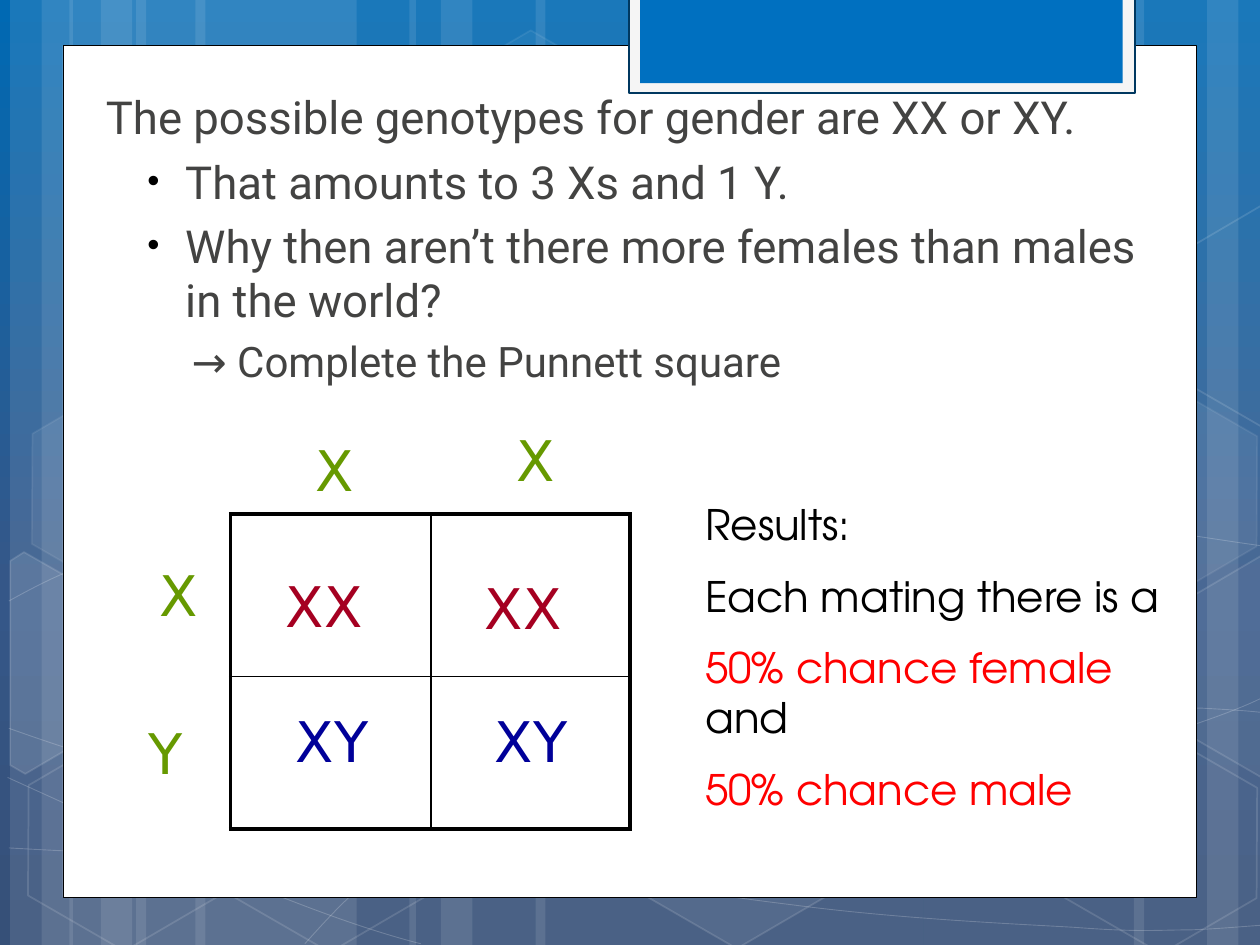
import math
from copy import deepcopy
from dataclasses import dataclass
from typing import NamedTuple, Optional

from pptx import Presentation
from pptx import util as u
from pptx.dml.color import RGBColor
from pptx.enum import shapes, text
from pptx.oxml import ns, xmlchemy

PX = 9144
TILT = 30


@dataclass(frozen=True)
class Theme:
    white: str = "FFFFFF"
    black: str = "000000"
    body: str = "434342"
    parent: str = "669900"
    female: str = "A50021"
    male: str = "000099"
    result: str = "FF0000"
    tab: str = "0070C0"
    tab_frame: str = "F5F5F5"
    tab_line: str = "003860"
    sky: tuple = ((0, "0069B3"), (0.62, "355788"), (1, "365078"))
    body_font: str = "Roboto"
    results_font: str = "TeX Gyre Adventor"
    allele_font: str = "DejaVu Sans"
    large: int = 26
    medium: int = 24
    allele: int = 32


T = Theme()


class Paint(NamedTuple):
    color: str
    alpha: int = 100


class Line(NamedTuple):
    color: str
    width: float
    alpha: int = 100


class Hexagon(NamedTuple):
    x: int
    y: int
    fill: int
    line: int


class CutHexagon(NamedTuple):
    center: tuple
    points: tuple
    fill: int


class Label(NamedTuple):
    text: str
    x: int
    y: int
    w: int
    color: str


class Item(NamedTuple):
    text: str
    level: int
    margin: int
    indent: int
    size: int
    bullet: bool = False


STRIPES = ((108, 175), (8, 50), (33, 83), (155, 175), (55, 50), (80, 83),
           (733, 175), (958, 50), (900, 83), (425, 308), (325, 50), (350, 83))
CURVES = (
    (((7, 673),), ((61, 676), (115, 679), (190, 678)), ((265, 677), (358, 675), (458, 665)),
     ((558, 655), (700, 636), (792, 617)), ((883, 598), (977, 568), (1007, 551))),
    (((7, 477),), ((36, 461), (65, 446), (121, 431)), ((178, 416), (259, 394), (347, 387)),
     ((436, 380), (544, 379), (654, 387)), ((764, 395), (947, 426), (1007, 434))),
    (((6, 617),), ((127, 672), (247, 727), (334, 749))),
    (((7, 578),), ((38, 589), (70, 600), (128, 616)), ((186, 631), (273, 656), (357, 673)),
     ((440, 690), (545, 708), (628, 718)), ((711, 729), (800, 733), (853, 736)),
     ((905, 740), (919, 738), (945, 738)), ((971, 737), (989, 735), (1007, 734))),
    (((242, 749),), ((260, 729), (278, 709), (302, 691)), ((326, 673), (360, 653), (388, 639)),
     ((416, 625), (433, 619), (470, 609)), ((506, 599), (573, 585), (608, 578)),
     ((644, 571), (649, 571), (680, 569)), ((711, 566), (760, 563), (794, 562)),
     ((829, 561), (886, 562), (886, 562)), ((953, 562),),
     ((971, 563), (988, 564), (997, 565)), ((1006, 566), (1003, 565), (1006, 566))),
)
HEXAGONS = (Hexagon(334, 36, 4, 8), Hexagon(497, 589, 6, 12), Hexagon(11, 591, 0, 12),
            Hexagon(14, 312, 7, 8), Hexagon(174, 592, 0, 12), Hexagon(753, 453, 10, 12),
            Hexagon(834, 593, 0, 12), Hexagon(834, 314, 7, 8))
CUT_HEXAGONS = (
    CutHexagon((36, 535), ((8, 445), (19, 438), (96, 482), (95, 570), (20, 614), (8, 607)), 10),
    CutHexagon((985, 520), ((926, 485), (1001, 441), (1009, 446), (1009, 613), (1002, 617),
                            (926, 573)), 4),
    CutHexagon((985, 241), ((926, 207), (1001, 163), (1010, 168), (1009, 335), (1002, 339),
                            (926, 295)), 0),
)
ITEMS = (
    Item("The possible genotypes for gender are XX or XY.", 0, 7, 0, T.large),
    Item("That amounts to 3 Xs and 1 Y.", 1, 70, -30, T.large, True),
    Item("Why then aren’t there more females than males in the world?",
         1, 70, -30, T.large, True),
    Item("→ Complete the Punnett square", 2, 75, 0, T.medium),
)
RESULTS = ((("Results:", T.black),), (("Each mating there is a", T.black),),
           (("50% chance female", T.result), (" and", T.black)),
           (("50% chance male", T.result),))
LABELS = (
    Label("X", 241, 341, 50, T.parent), Label("X", 400, 333, 50, T.parent),
    Label("Y", 108, 565, 50, T.parent), Label("X", 117, 440, 50, T.parent),
    Label("XX", 217, 449, 92, T.female), Label("XX", 375, 450, 92, T.female),
    Label("XY", 225, 556, 92, T.male), Label("XY", 383, 556, 92, T.male),
)


def px(*values: float) -> list:
    return [u.Emu(round(v * PX)) for v in values]


def sub(parent, tag: str, **attrs):
    el = xmlchemy.OxmlElement(tag)
    for name, value in attrs.items():
        el.set(name, str(value))
    parent.append(el)
    return el


def style(sp, fill: Optional[Paint], line: Optional[Line]) -> None:
    sp.shadow.inherit = False
    for target, paint, tag in ((sp.fill, fill, "a:solidFill"),
                               (sp.line.fill, line, "a:ln/a:solidFill")):
        if paint is None:
            target.background()
            continue
        target.solid()
        target.fore_color.rgb = RGBColor.from_string(paint.color)
        if paint.alpha < 100:
            color = sp.element.spPr.find(tag, ns.namespaces("a"))[0]
            sub(color, "a:alpha", val=paint.alpha * 1000)
    if line:
        sp.line.width = u.Pt(line.width)


def box(s, x: int, y: int, w: int, h: int, fill: Optional[Paint],
        line: Optional[Line] = None, kind=shapes.MSO_SHAPE.RECTANGLE):
    sp = s.shapes.add_shape(kind, *px(x, y, w, h))
    style(sp, fill, line)
    return sp


def outline(s, points: list, fill: Optional[Paint], line: Line, close: bool):
    start, *rest = [px(*pt) for pt in points]
    builder = s.shapes.build_freeform(*start, scale=1.0)
    builder.add_line_segments(rest, close=close)
    sp = builder.convert_to_shape()
    style(sp, fill, line)
    return sp


def curve(s, segments: tuple) -> None:
    points = [pt for segment in segments for pt in segment]
    sp = outline(s, points, None, Line(T.white, 0.5, 20), False)
    steps = iter(list(sp.element.iter(ns.qn("a:lnTo"))))
    for segment in segments[1:]:
        group = [next(steps) for _ in segment]
        if len(group) == 3:
            bezier = xmlchemy.OxmlElement("a:cubicBezTo")
            group[0].addprevious(bezier)
            for step in group:
                bezier.append(step[0])
                step.getparent().remove(step)


def cut_hexagon(s, hx: CutHexagon) -> None:
    cx, cy = hx.center
    cos, sin = math.cos(math.radians(TILT)), math.sin(math.radians(TILT))
    upright = [(cx + (x - cx) * cos + (y - cy) * sin, cy - (x - cx) * sin + (y - cy) * cos)
               for x, y in hx.points]
    sp = outline(s, upright, Paint(T.white, hx.fill) if hx.fill else None,
                 Line(T.white, 1, 12), True)
    sp.rotation = TILT


def format_run(r, font: str, size: int, color: str) -> None:
    r.font.name, r.font.size = font, u.Pt(size)
    r.font.color.rgb = RGBColor.from_string(color)


def draw_background(s) -> None:
    fill = s.background.fill
    fill.gradient()
    fill.gradient_angle = 270
    stops = next(s.element.iter(ns.qn("a:gsLst")))
    stops.insert(1, deepcopy(stops[0]))
    for stop, (position, color) in zip(fill.gradient_stops, T.sky):
        stop.position = position
        stop.color.rgb = RGBColor.from_string(color)
    for x, w in STRIPES:
        box(s, x, 0, w, 750, Paint(T.white, 10))
    for segments in CURVES:
        curve(s, segments)
    for hx in HEXAGONS:
        sp = box(s, hx.x, hx.y, 175, 152, Paint(T.white, hx.fill) if hx.fill else None,
                 Line(T.white, 1, hx.line), shapes.MSO_SHAPE.HEXAGON)
        sp.adjustments[0] = 0.285
        sp.rotation = TILT
    for hx in CUT_HEXAGONS:
        cut_hexagon(s, hx)
    box(s, 50, 36, 900, 676, Paint(T.white), Line(T.black, 0.5))
    box(s, 499, -2, 402, 76, Paint(T.tab_frame), Line(T.tab_line, 1.25))
    box(s, 508, -2, 383, 68, Paint(T.tab))


def draw_body(s) -> None:
    title, body = s.shapes.title.element, s.placeholders[1]
    title.getparent().remove(title)
    body.element.getparent().append(body.element)
    body.left, body.top, body.width, body.height = px(67, 66, 850, 300)
    tf = body.text_frame
    tf.text = "\n".join(item.text for item in ITEMS)
    tf.auto_size = text.MSO_AUTO_SIZE.NONE
    for i, (p, item) in enumerate(zip(tf.paragraphs, ITEMS)):
        p.level, p.space_before = item.level, u.Pt(item.size * 0.21 if i else 0)
        pPr = p._p.get_or_add_pPr()
        pPr.set("marL", str(item.margin * PX))
        pPr.set("indent", str(item.indent * PX))
        if item.bullet:
            sub(sub(pPr, "a:buClr"), "a:srgbClr", val=T.black)
            sub(pPr, "a:buSzPct", val=76000)
            sub(pPr, "a:buChar", char="•")
        else:
            sub(pPr, "a:buNone")
        format_run(p.runs[0], T.body_font, item.size, T.body)


def draw_punnett_square(s) -> None:
    table = s.shapes.add_table(2, 2, *px(183, 408, 317, 250)).table
    table.first_row = table.horz_banding = False
    for col, width in zip(table.columns, px(159, 158)):
        col.width = width
    for row, height in zip(table.rows, px(129, 121)):
        row.height = height
    for i, cell in enumerate(table.iter_cells()):
        row, col = divmod(i, 2)
        tcPr = cell._tc.get_or_add_tcPr()
        for side, outer in (("L", col == 0), ("R", col == 1), ("T", row == 0), ("B", row == 1)):
            ln = sub(tcPr, f"a:ln{side}", w=u.Pt(2.25 if outer else 1))
            sub(sub(ln, "a:solidFill"), "a:srgbClr", val=T.black)
        cell.fill.background()


def text_box(s, x: int, y: int, w: int, h: int, paragraphs: tuple, font: str, size: int) -> None:
    tf = s.shapes.add_textbox(*px(x, y, w, h)).text_frame
    tf.word_wrap = True
    for i, runs in enumerate(paragraphs):
        p = tf.add_paragraph() if i else tf.paragraphs[0]
        p.space_before = u.Pt(size / 2 if i else 0)
        for words, color in runs:
            r = p.add_run()
            r.text = words
            format_run(r, font, size, color)


def main() -> None:
    prs = Presentation()
    prs.slide_width, prs.slide_height = px(1000, 750)
    s = prs.slides.add_slide(prs.slide_layouts[1])
    draw_background(s)
    draw_body(s)
    draw_punnett_square(s)
    text_box(s, 550, 391, 383, 270, RESULTS, T.results_font, T.medium)
    for lb in LABELS:
        text_box(s, lb.x, lb.y, lb.w, 149, (((lb.text, lb.color),),), T.allele_font, T.allele)
    prs.save("out.pptx")


if __name__ == "__main__":
    main()
